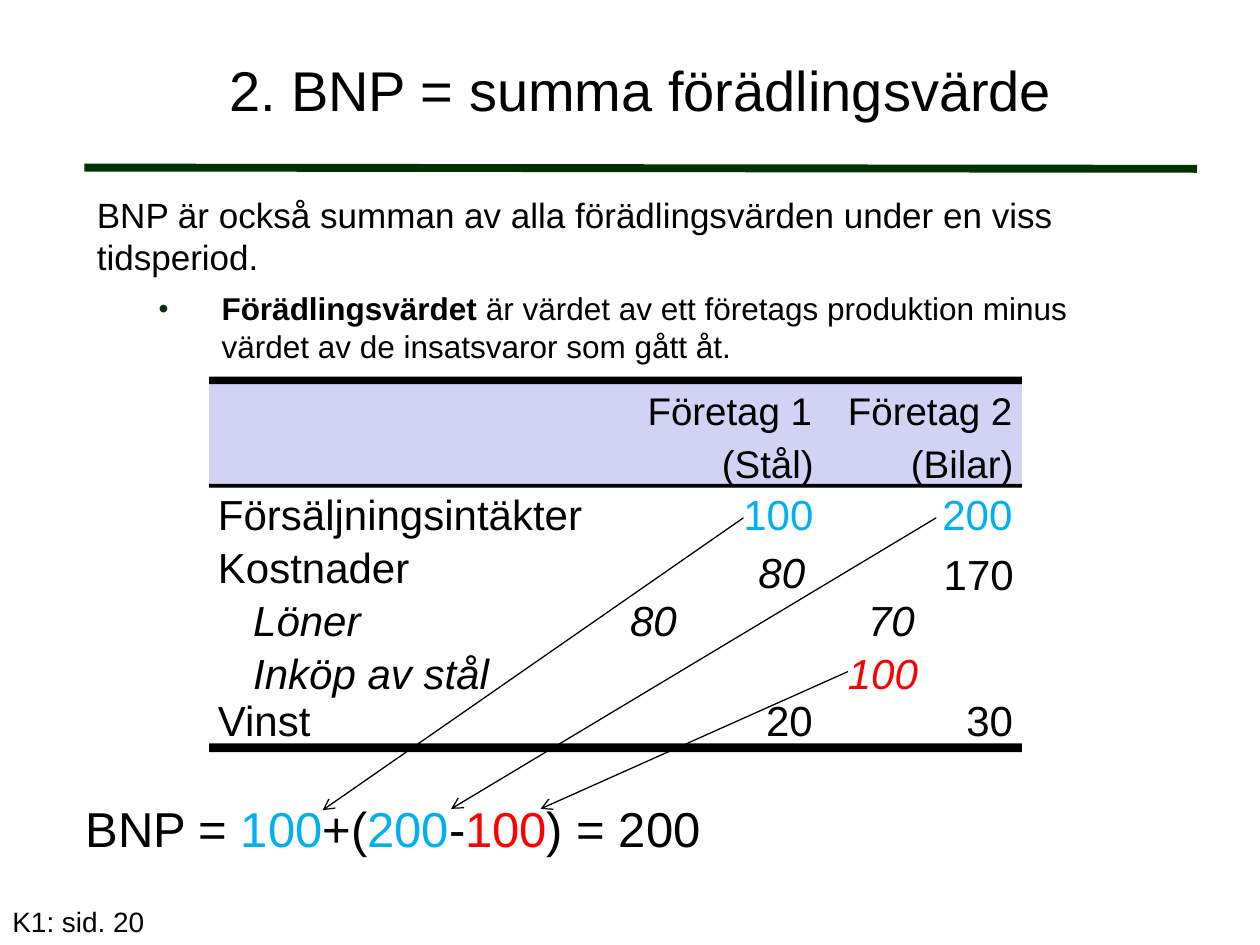
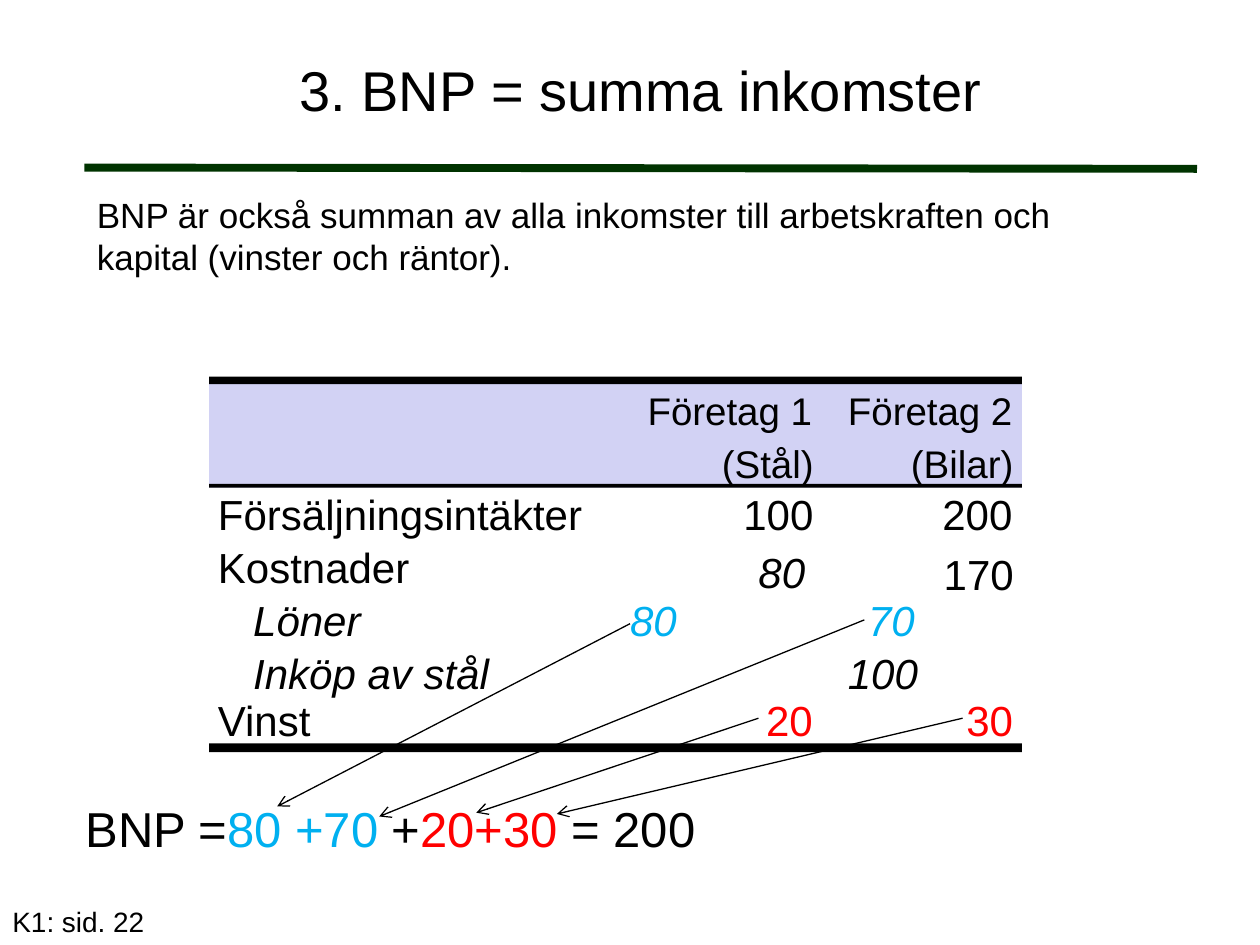
from lxml import etree
from pptx import Presentation
from pptx.dml.color import RGBColor
from pptx.enum.shapes import MSO_CONNECTOR, MSO_SHAPE
from pptx.enum.text import MSO_ANCHOR, MSO_AUTO_SIZE, PP_ALIGN
from pptx.oxml.ns import qn
from pptx.util import Inches, Pt

STRAIGHT = MSO_CONNECTOR.STRAIGHT
RECTANGLE = MSO_SHAPE.RECTANGLE
MIDDLE = MSO_ANCHOR.MIDDLE
CENTER = PP_ALIGN.CENTER
GROW = MSO_AUTO_SIZE.SHAPE_TO_FIT_TEXT

COLORS = {"black": "000000", "green": "003300", "lavender": "D2D2F4",
          "blue": "00B0F0", "red": "FF0000"}
FONT = "Arial"
TABLE_LEFT, TABLE_WIDTH = 1.66, 6.45
LABEL_LEFT, INDENTED_LEFT = 1.73, 2.01

TABLE_BANDS = [(3.02, 0.85, "lavender"), (2.99, 0.06, "black"),
               (3.84, 0.03, "black"), (5.9, 0.07, "black")]

HEADINGS = [("Företag 1", 5.14, 3.07, 1.32), ("Företag 2", 6.73, 3.07, 1.32),
            ("(Stål)", 5.73, 3.49, 0.74), ("(Bilar)", 7.23, 3.49, 0.82)]

CELLS = [
    ("sales", "Försäljningsintäkter", LABEL_LEFT, 3.88, 3.17, False),
    ("sales 1", "100", 5.9, 3.88, 0.56, False),
    ("sales 2", "200", 7.48, 3.88, 0.56, False),
    ("costs", "Kostnader", LABEL_LEFT, 4.3, 1.54, False),
    ("costs 1", "80", 6.02, 4.34, 0.54, True),
    ("costs 2", "170", 7.49, 4.35, 0.73, False),
    ("wages", "Löner", INDENTED_LEFT, 4.72, 0.86, True),
    ("wages 1", "80", 5, 4.72, 0.38, True),
    ("wages 2", "70", 6.89, 4.72, 0.38, True),
    ("steel", "Inköp av stål", INDENTED_LEFT, 5.14, 2.13, True),
    ("steel 2", "100", 6.73, 5.14, 0.56, True),
    ("profit", "Vinst", LABEL_LEFT, 5.51, 0.93, False),
    ("profit 1", "20", 6.08, 5.51, 0.38, False),
    ("profit 2", "30", 7.67, 5.51, 0.38, False),
]

PAGES = [
    {
        "title": "2. BNP = summa förädlingsvärde",
        "intro": "BNP är också summan av alla förädlingsvärden under en viss tidsperiod.",
        "bullet": ("Förädlingsvärdet", " är värdet av ett företags produktion "
                   "minus värdet av de insatsvaror som gått åt."),
        "highlights": {"sales 1": "blue", "sales 2": "blue", "steel 2": "red"},
        "formula": [("BNP = ", "black"), ("100", "blue"), ("+(", "black"), ("200", "blue"),
                    ("-", "black"), ("100", "red"), (") = 200", "black")],
        "arrows": [(5.9, 4.11, 2.56, 6.43), (7.43, 4.11, 3.58, 6.42),
                   (6.73, 5.33, 4.29, 6.42)],
        "reference": "K1: sid. 20",
    },
    {
        "title": "3. BNP = summa inkomster",
        "intro": "BNP är också summan av alla inkomster till arbetskraften "
                 "och kapital (vinster och räntor).",
        "bullet": None,
        "highlights": {"wages 1": "blue", "wages 2": "blue",
                       "profit 1": "red", "profit 2": "red"},
        "formula": [("BNP =", "black"), ("80 +70 ", "blue"), ("+", "black"),
                    ("20+30", "red"), (" = 200", "black")],
        "arrows": [(5, 4.95, 2.2, 6.4), (6.86, 4.92, 3.01, 6.48),
                   (6.02, 5.7, 3.78, 6.45), (7.64, 5.7, 4.42, 6.46)],
        "reference": "K1: sid. 22",
    },
]


def add_text(shapes, left, top, width, height, spans, size, italic=False, inset=True):
    box = shapes.add_textbox(Inches(left), Inches(top), Inches(width), Inches(height))
    frame = box.text_frame
    frame.word_wrap = inset
    if not inset:
        frame.auto_size = GROW
        frame.margin_left = frame.margin_right = 0
        frame.margin_top = frame.margin_bottom = 0
    for text, color in spans:
        span = frame.paragraphs[0].add_run()
        span.text = text
        span.font.name = FONT
        span.font.size = Pt(size)
        span.font.italic = italic
        span.font.color.rgb = RGBColor.from_string(COLORS[color])
    return frame


def add_line(page, start_x, start_y, end_x, end_y, color, weight):
    line = page.shapes.add_connector(STRAIGHT, Inches(start_x), Inches(start_y),
                                     Inches(end_x), Inches(end_y))
    line.line.color.rgb = RGBColor.from_string(COLORS[color])
    line.line.width = Pt(weight)
    etree.SubElement(line._element.spPr, qn("a:effectLst"))
    return line


deck = Presentation()
deck.slide_width = Inches(10)
deck.slide_height = Inches(7.5)

for content in PAGES:
    page = deck.slides.add_slide(deck.slide_layouts[6])
    add_line(page, 0.67, 1.33, 9.5, 1.34, "green", 4.5)

    reference = add_text(page.shapes, 0, 7.13, 2.08, 0.37, [(content["reference"], "black")], 16)
    reference.paragraphs[0].space_before = Pt(15)

    body = add_text(page.shapes, 0.67, 1.49, 8.29, 4.76, [(content["intro"], "black")], 20)
    body.paragraphs[0].space_before = body.paragraphs[0].space_after = Pt(3.5)
    if content["bullet"]:
        para = body.add_paragraph()
        para.level = 1
        para.space_before = para.space_after = Pt(3)
        for text, bold in zip(content["bullet"], (True, False)):
            span = para.add_run()
            span.text = text
            span.font.name = FONT
            span.font.size = Pt(18)
            span.font.bold = bold
            span.font.color.rgb = RGBColor.from_string(COLORS["black"])
        properties = para._p.get_or_add_pPr()
        properties.set("marL", str(Inches(0.99)))
        properties.set("indent", str(Inches(-0.5)))
        bullet_color = etree.SubElement(properties, qn("a:buClr"))
        etree.SubElement(bullet_color, qn("a:srgbClr"), val=COLORS["green"])
        etree.SubElement(properties, qn("a:buSzPct"), val="90000")
        etree.SubElement(properties, qn("a:buFont"), typeface=FONT)
        etree.SubElement(properties, qn("a:buChar"), char="•")

    title = add_text(page.shapes, 0.67, 0.08, 8.83, 1.25, [(content["title"], "black")], 32)
    title.vertical_anchor = MIDDLE
    title.paragraphs[0].alignment = CENTER

    table = page.shapes.add_group_shape().shapes
    for top, height, color in TABLE_BANDS:
        band = table.add_shape(RECTANGLE, Inches(TABLE_LEFT), Inches(top),
                               Inches(TABLE_WIDTH), Inches(height))
        band.shadow.inherit = False
        band.fill.solid()
        band.fill.fore_color.rgb = RGBColor.from_string(COLORS[color])
        band.line.fill.background()
    for text, left, top, width in HEADINGS:
        add_text(table, left, top, width, 0.37, [(text, "black")], 22, inset=False)
    for name, text, left, top, width, italic in CELLS:
        color = content["highlights"].get(name, "black")
        add_text(table, left, top, width, 0.4, [(text, color)], 24, italic, inset=False)

    formula = add_text(page.shapes, 0.58, 6.29, 9, 0.5, content["formula"], 28)
    formula.paragraphs[0].space_before = formula.paragraphs[0].space_after = Pt(3.5)

    for ends in content["arrows"]:
        arrow = add_line(page, *ends, "black", 0.75)
        etree.SubElement(arrow.line._get_or_add_ln(), qn("a:tailEnd"), type="arrow")

deck.save("out.pptx")
